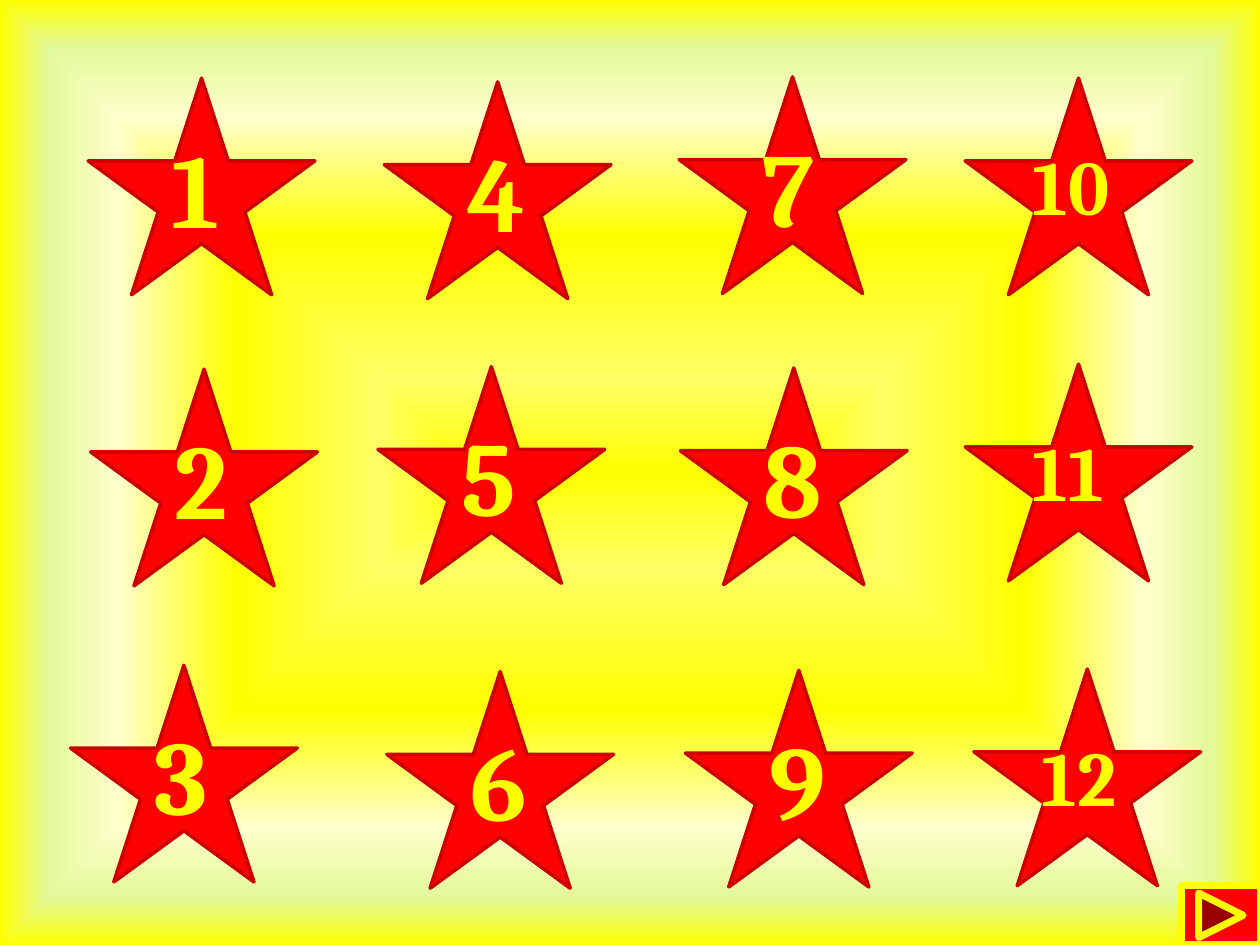
from dataclasses import dataclass
from typing import Any

from lxml import etree
from pptx import Presentation
from pptx.dml.color import RGBColor
from pptx.enum.shapes import MSO_SHAPE as Shape
from pptx.enum.text import MSO_AUTO_SIZE as AutoSize
from pptx.oxml.ns import qn
from pptx.util import Inches, Pt

COLORS = {
    "yellow": "FFFF00",
    "lemon": "FFFF66",
    "cream": "FFFFCC",
    "lime": "E2F999",
    "red": "FF0000",
    "crimson": "CC0000",
}
COLUMNS, ROWS = 100, 75
STAR_SIZE = (18, 17.2)
STAR_COLUMNS = [
    [(7, 6.2), (7.2, 29.3), (5.6, 52.8)],
    [(30.5, 6.5), (30, 29.1), (30.7, 53.3)],
    [(53.9, 6.1), (54, 29.2), (54.4, 53.2)],
    [(76.6, 6.2), (76.6, 28.9), (77.3, 53.1)],
]
GLOW = [
    (0, "yellow"),
    (20, "lemon"),
    (50, "yellow"),
    (75, "cream"),
    (90, "lime"),
    (100, "yellow"),
]


def write(frame, text, size, color, font="Cambria", bold=True):
    run = frame.paragraphs[0].add_run()
    run.text = text
    run.font.name = font
    run.font.size = Pt(size)
    run.font.bold = bold
    run.font.color.rgb = RGBColor.from_string(COLORS[color])


@dataclass
class Board:
    deck: Any
    slide: Any

    def area(self, column, row, columns, rows):
        across = self.deck.slide_width / COLUMNS
        down = self.deck.slide_height / ROWS
        return [round(v) for v in (column * across, row * down, columns * across, rows * down)]

    def background(self, stops):
        fill = self.slide.background.fill
        fill.gradient()
        gradient = self.slide._element.find(".//" + qn("a:gradFill"))
        for child in list(gradient):
            gradient.remove(child)
        stop_list = etree.SubElement(gradient, qn("a:gsLst"))
        for position, color in stops:
            stop = etree.SubElement(stop_list, qn("a:gs"), pos=str(position * 1000))
            etree.SubElement(stop, qn("a:srgbClr"), val=COLORS[color])
        center = etree.SubElement(gradient, qn("a:path"), path="shape")
        etree.SubElement(center, qn("a:fillToRect"), dict.fromkeys("ltrb", "50000"))

    def shape(self, parent, kind, area, line, width):
        item = parent.add_shape(kind, *self.area(*area))
        item.shadow.inherit = False
        item.fill.solid()
        item.fill.fore_color.rgb = RGBColor.from_string(COLORS["red"])
        item.line.color.rgb = RGBColor.from_string(COLORS[line])
        item.line.width = Pt(width)

    def label(self, parent, text, area, size):
        frame = parent.add_textbox(*self.area(*area)).text_frame
        frame.word_wrap = True
        frame.auto_size = AutoSize.SHAPE_TO_FIT_TEXT
        write(frame, text, size, "yellow")

    def star(self, number, column, row):
        group = self.slide.shapes.add_group_shape().shapes
        self.shape(group, Shape.STAR_5_POINT, (column, row, *STAR_SIZE), "crimson", 2)
        if number < 10:
            area, size = (column + 5.65, row + 3.1, 4.8, 11.1), 60
        else:
            area, size = (column + 4.4, row + 4.3, 9.4, 8.4), 44
        self.label(group, str(number), area, size)

    def next_button(self):
        self.shape(
            self.slide.shapes,
            Shape.ACTION_BUTTON_FORWARD_OR_NEXT,
            (93.8, 70.3, 6.2, 4.7),
            "yellow",
            4,
        )


def main():
    deck = Presentation()
    deck.slide_width, deck.slide_height = Inches(10), Inches(7.5)
    board = Board(deck, deck.slides.add_slide(deck.slide_layouts[6]))
    board.background(GLOW)
    places = [place for column in STAR_COLUMNS for place in column]
    for number, place in enumerate(places, start=1):
        board.star(number, *place)
    board.next_button()
    deck.save("out.pptx")


if __name__ == "__main__":
    main()
